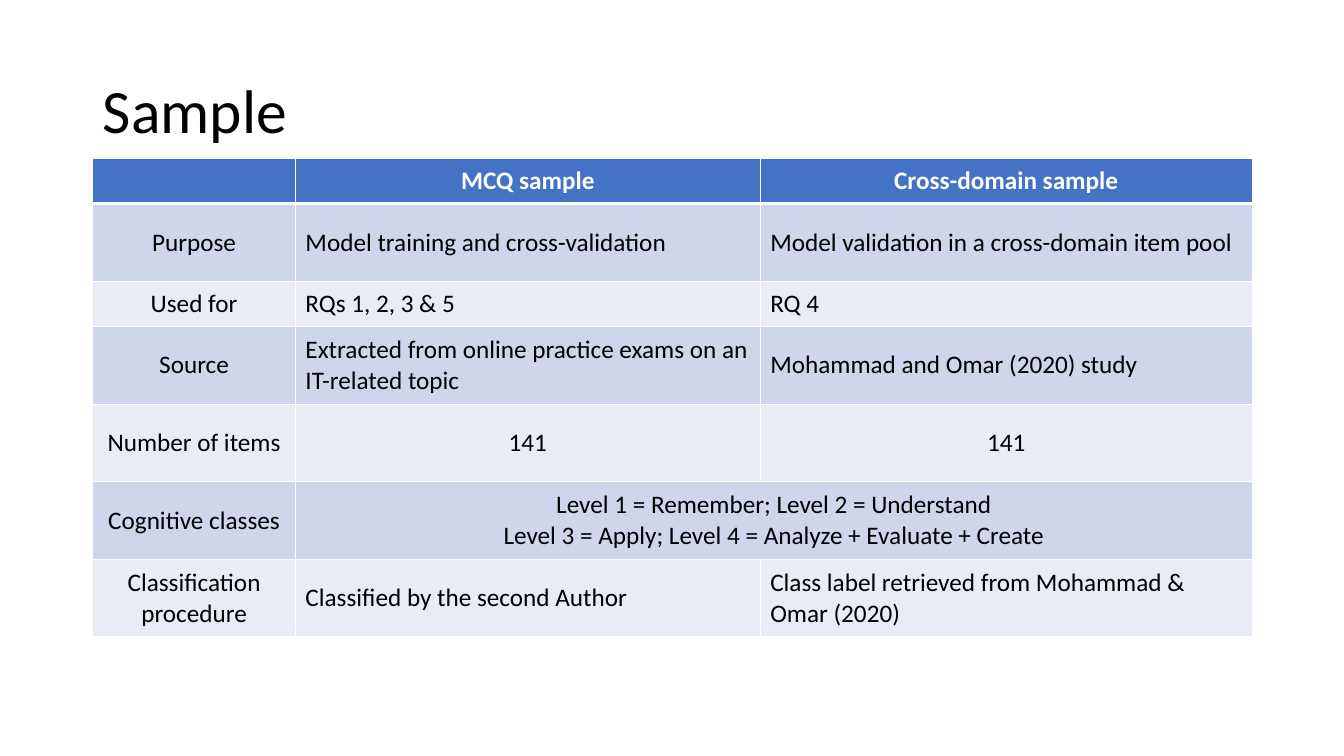
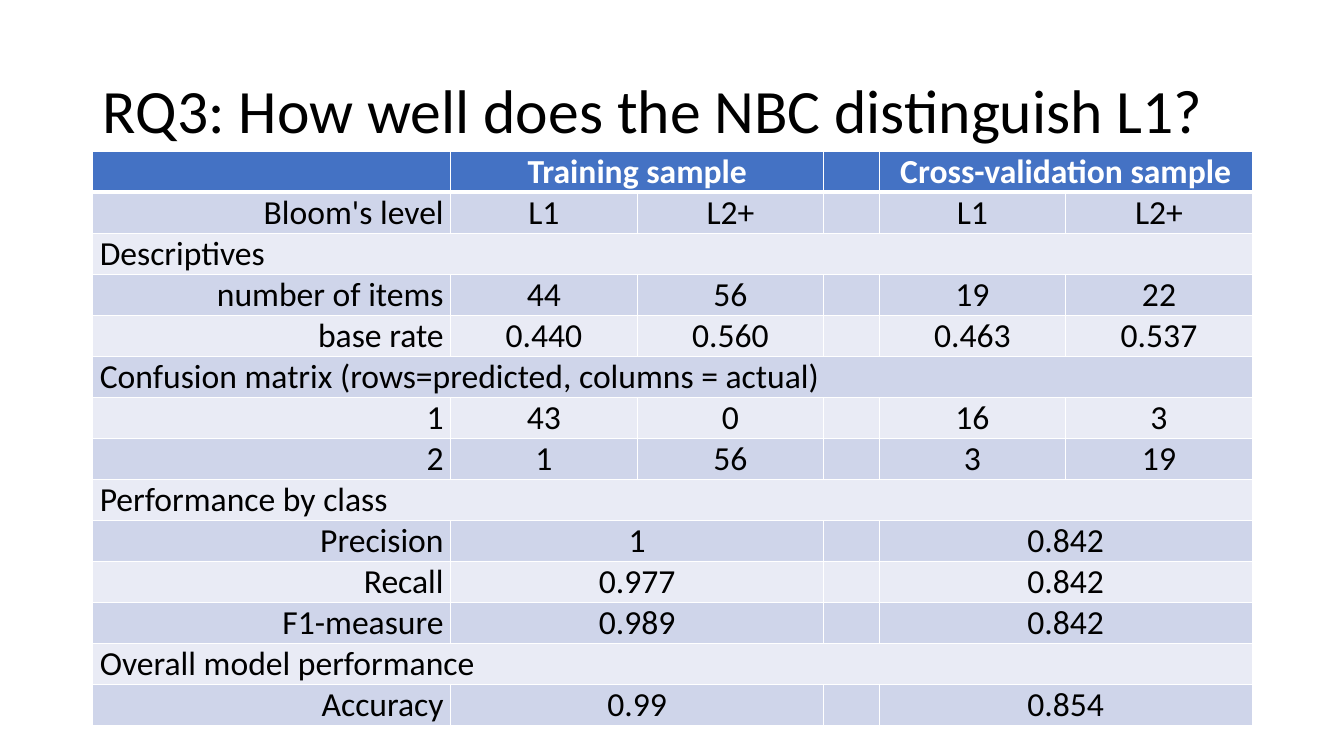
import pptx
import pptx.dml.color
import pptx.enum.text
import pptx.oxml
import pptx.oxml.ns
import pptx.util

# Shared style
SLIDE_WIDTH, SLIDE_HEIGHT = 13.33, 7.5
LEFT, CONTENT_WIDTH = 0.92, 11.5
TITLE_TOP, TITLE_HEIGHT = 0.4, 1.45
FONT = "Calibri"
BLACK, WHITE = "000000", "FFFFFF"
HEADER_FILL = "4472C4"
BAND_FILLS = ("CFD5EA", "E9EBF5")
THIN, THICK = 1, 3
ALIGNMENTS = {
    "l": pptx.enum.text.PP_ALIGN.LEFT,
    "c": pptx.enum.text.PP_ALIGN.CENTER,
    "r": pptx.enum.text.PP_ALIGN.RIGHT,
}
MIDDLE = pptx.enum.text.MSO_ANCHOR.MIDDLE

# Sample table: (alignment of each cell, row height, texts); None joins the cell to its left
ONE_LINE, TWO_LINES = 0.45, 0.77
SAMPLE_ROWS = [
    ("ccc", ONE_LINE, ["", "MCQ sample", "Cross-domain sample"]),
    ("cll", TWO_LINES, ["Purpose", "Model training and cross-validation",
                        "Model validation in a cross-domain item pool"]),
    ("cll", ONE_LINE, ["Used for", "RQs 1, 2, 3 & 5", "RQ 4"]),
    ("cll", TWO_LINES, ["Source", "Extracted from online practice exams on an IT-related topic",
                        "Mohammad and Omar (2020) study"]),
    ("ccc", TWO_LINES, ["Number of items", "141", "141"]),
    ("ccc", TWO_LINES, ["Cognitive classes",
                        "Level 1 = Remember; Level 2 = Understand\n"
                        "Level 3 = Apply; Level 4 = Analyze + Evaluate + Create", None]),
    ("cll", TWO_LINES, ["Classification procedure", "Classified by the second Author",
                        "Class label retrieved from Mohammad & Omar (2020)"]),
]
SAMPLE_COLUMNS = [2.01, 4.61, 4.88]

# Result table
RESULT_ROW = 0.4
RESULT_COLUMNS = [3.55, 1.85, 1.85, 0.55, 1.85, 1.85]


def section(label):
    return "llllll", RESULT_ROW, [label] + [None] * 5


def split_row(label, *values):
    return "rccccc", RESULT_ROW, [label, *values[:2], "", *values[2:]]


def joined_row(label, training, validation):
    return split_row(label, training, None, validation, None)


RESULT_ROWS = [
    joined_row("", "Training sample", "Cross-validation sample"),
    split_row("Bloom's level", "L1", "L2+", "L1", "L2+"),
    section("Descriptives"),
    split_row("number of items", "44", "56", "19", "22"),
    split_row("base rate", "0.440", "0.560", "0.463", "0.537"),
    section("Confusion matrix (rows=predicted, columns = actual)"),
    split_row("1", "43", "0", "16", "3"),
    split_row("2", "1", "56", "3", "19"),
    section("Performance by class"),
    joined_row("Precision", "1", "0.842"),
    joined_row("Recall", "0.977", "0.842"),
    joined_row("F1-measure", "0.989", "0.842"),
    section("Overall model performance"),
    joined_row("Accuracy", "0.99", "0.854"),
]


def color(code):
    return pptx.dml.color.RGBColor.from_string(code)


def set_font(para, size, code, bold=False):
    para.font.name = FONT
    para.font.size = pptx.util.Pt(size)
    para.font.bold = bold
    para.font.color.rgb = color(code)


def add_titled_page(deck, text):
    page = deck.slides.add_slide(deck.slide_layouts[5])
    title = page.shapes.title
    title.left, title.top, title.width, title.height = map(
        pptx.util.Inches, (LEFT, TITLE_TOP, CONTENT_WIDTH, TITLE_HEIGHT))
    title.text_frame.text = text
    title.text_frame.vertical_anchor = MIDDLE
    para = title.text_frame.paragraphs[0]
    para.alignment = ALIGNMENTS["l"]
    para.line_spacing = 0.9
    set_font(para, 44, BLACK)
    return page


def set_borders(cell, top, bottom):
    properties = cell._tc.get_or_add_tcPr()
    for side, points in (("L", THIN), ("R", THIN), ("T", top), ("B", bottom)):
        properties.append(pptx.oxml.parse_xml(
            f'<a:ln{side} {pptx.oxml.ns.nsdecls("a")} w="{pptx.util.Pt(points)}">'
            f'<a:solidFill><a:srgbClr val="{WHITE}"/></a:solidFill></a:ln{side}>'))


def format_cell(cell, row, text, align, size, insets):
    # The thick rule lies between the header and the first body row
    set_borders(cell, THICK if row == 1 else THIN, THICK if row == 0 else THIN)
    cell.fill.solid()
    cell.fill.fore_color.rgb = color(BAND_FILLS[(row - 1) % 2] if row else HEADER_FILL)
    cell.vertical_anchor = MIDDLE
    cell.margin_left = cell.margin_right = pptx.util.Inches(insets[0])
    cell.margin_top = cell.margin_bottom = pptx.util.Inches(insets[1])
    cell.text_frame.text = text or ""
    for para in cell.text_frame.paragraphs:
        para.alignment = ALIGNMENTS[align]
        set_font(para, size, BLACK if row else WHITE, bold=row == 0)


def add_banded_table(page, top, columns, rows, size, insets):
    height = sum(row_height for _, row_height, _ in rows)
    table = page.shapes.add_table(
        len(rows), len(columns),
        *map(pptx.util.Inches, (LEFT, top, CONTENT_WIDTH, height))).table
    for column, width in zip(table.columns, columns):
        column.width = pptx.util.Inches(CONTENT_WIDTH * width / sum(columns))
    for row, (aligns, row_height, texts) in enumerate(rows):
        table.rows[row].height = pptx.util.Inches(row_height)
        for column, (align, text) in enumerate(zip(aligns, texts)):
            format_cell(table.cell(row, column), row, text, align, size, insets)
        # Join each text with the None entries that follow it
        starts = [column for column, text in enumerate(texts) if text is not None]
        for start, end in zip(starts, starts[1:] + [len(texts)]):
            if end - start > 1:
                table.cell(row, start).merge(table.cell(row, end - 1))


def main():
    deck = pptx.Presentation()
    deck.slide_width = pptx.util.Inches(SLIDE_WIDTH)
    deck.slide_height = pptx.util.Inches(SLIDE_HEIGHT)

    # Samples
    page = add_titled_page(deck, "Sample")
    add_banded_table(page, 1.57, SAMPLE_COLUMNS, SAMPLE_ROWS, 18, (0.1, 0.05))

    # Classifier results
    page = add_titled_page(deck, "RQ3: How well does the NBC distinguish L1?")
    add_banded_table(page, 1.5, RESULT_COLUMNS, RESULT_ROWS, 24, (0.07, 0))

    deck.save("out.pptx")


if __name__ == "__main__":
    main()
